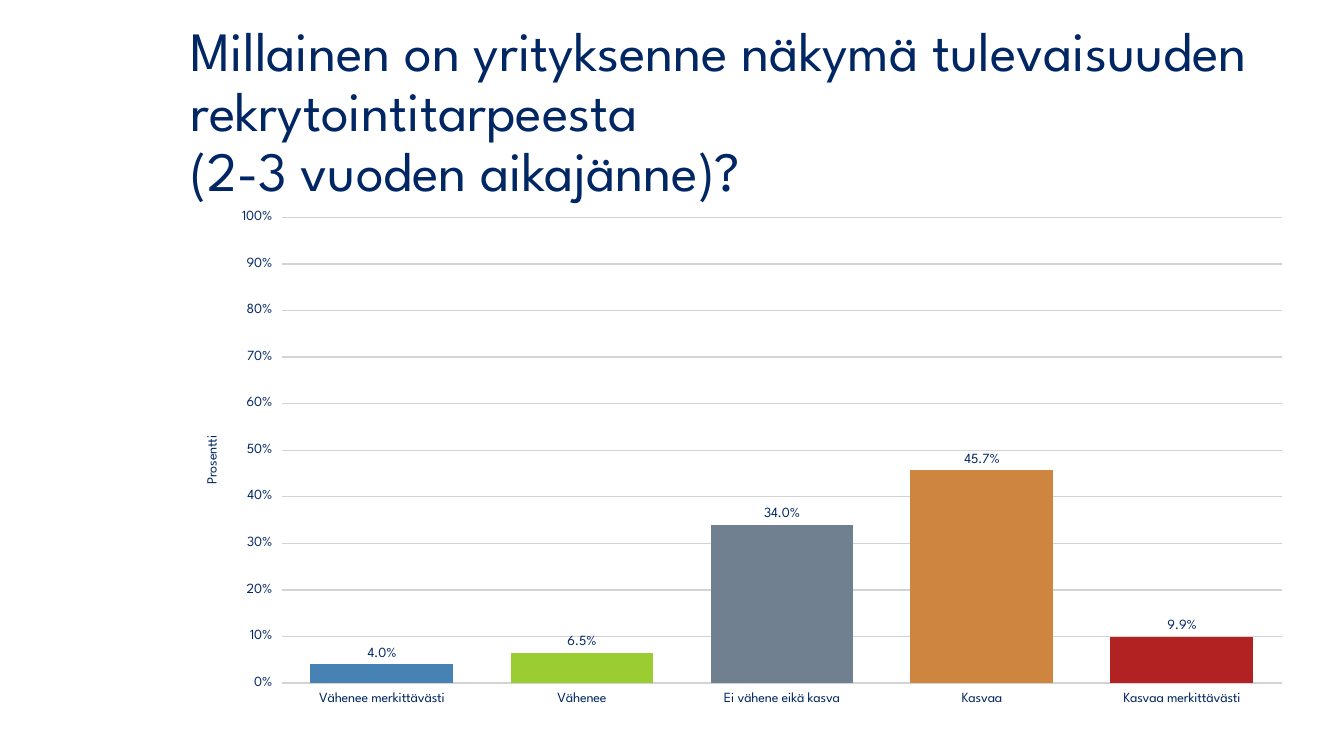
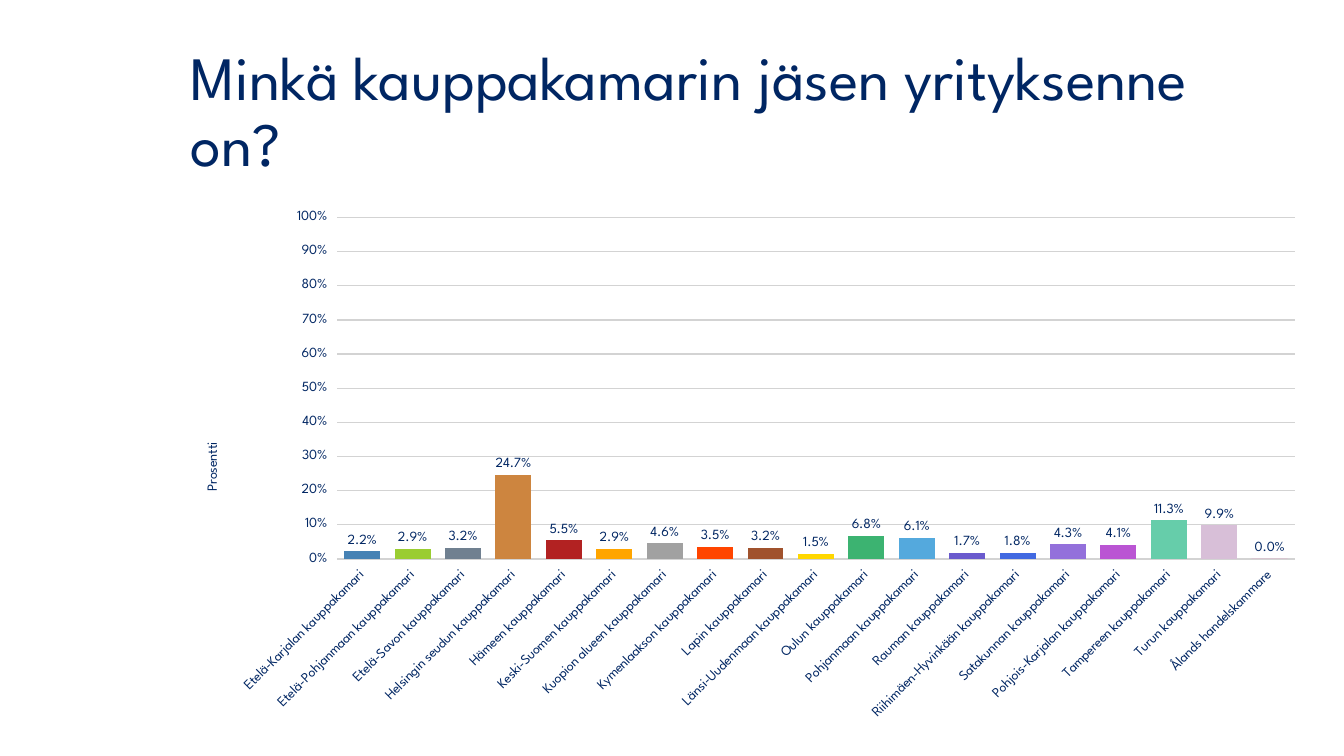
"""Build two survey slides, each with a title and a column chart of percentages."""
from dataclasses import dataclass
from typing import Any

import lxml.etree
import pptx
import pptx.chart.data
import pptx.dml.color
import pptx.enum.chart
import pptx.enum.text
import pptx.oxml.ns
import pptx.util

Pt = pptx.util.Pt
RGBColor = pptx.dml.color.RGBColor
qn = pptx.oxml.ns.qn

FONT_NAME = "League Spartan"
NAVY = RGBColor(0x00, 0x26, 0x63)
GRID_GREY = RGBColor(0xD3, 0xD3, 0xD3)
BAR_COLOURS = [
    RGBColor.from_string(value)
    for value in (
        "4682B4 9ACD32 708090 CD853F B22222 FFA500 A1A1A1 FF4500 A0522D FFD700 "
        "3CB371 54A9DD 6A5ACD 4169E1 9370DB BA55D3 66CDAA D8BFD8 FF69B4"
    ).split()
]
CHART_FONT = {"name": FONT_NAME, "size": Pt(10), "bold": False}
VALUE_AXIS_FORMAT = {
    "minimum_scale": 0,
    "maximum_scale": 1,
    "major_unit": 0.1,
    "has_major_gridlines": True,
    "has_title": True,
}
DATA_LABEL_FORMAT = {
    "show_value": True,
    "number_format": "0.0%",
    "number_format_is_linked": False,
    "position": pptx.enum.chart.XL_LABEL_POSITION.OUTSIDE_END,
}
TICK_LABEL_FORMAT = {"number_format": "0%", "number_format_is_linked": False}


@dataclass(frozen=True)
class Frame:
    """A rectangle in points."""

    left: float
    top: float
    width: float
    height: float

    def lengths(self) -> tuple[pptx.util.Length, ...]:
        """Return the four sides as lengths for python-pptx."""
        return tuple(Pt(side) for side in (self.left, self.top, self.width, self.height))


@dataclass(frozen=True)
class Question:
    """One survey question with its answers and its chart geometry."""

    title: str
    title_size: float
    chart_frame: Frame
    plot_frame: Frame
    label_angle: int
    shares: dict[str, float]


TITLE_FRAME = Frame(128.9, 28.8, 787.7, 104.4)
QUESTIONS = [
    Question(
        "Millainen on yrityksenne näkymä tulevaisuuden rekrytointitarpeesta\v"
        "(2-3 vuoden aikajänne)?",
        39.6,
        Frame(128.9, 144, 802.8, 367.2),
        Frame(201.4, 155.4, 714.3, 332.5),
        0,
        {
            "Vähenee merkittävästi": 0.04,
            "Vähenee": 0.065,
            "Ei vähene eikä kasva": 0.34,
            "Kasvaa": 0.457,
            "Kasvaa merkittävästi": 0.099,
        },
    ),
    Question(
        "Minkä kauppakamarin jäsen yrityksenne on?",
        44,
        Frame(128.9, 144, 812.2, 378),
        Frame(240.7, 155.4, 684.3, 243.9),
        -45,
        {
            "Etelä-Karjalan kauppakamari": 0.022,
            "Etelä-Pohjanmaan kauppakamari": 0.029,
            "Etelä-Savon kauppakamari": 0.032,
            "Helsingin seudun kauppakamari": 0.247,
            "Hämeen kauppakamari": 0.055,
            "Keski-Suomen kauppakamari": 0.029,
            "Kuopion alueen kauppakamari": 0.046,
            "Kymenlaakson kauppakamari": 0.035,
            "Lapin kauppakamari": 0.032,
            "Länsi-Uudenmaan kauppakamari": 0.015,
            "Oulun kauppakamari": 0.068,
            "Pohjanmaan kauppakamari": 0.061,
            "Rauman kauppakamari": 0.017,
            "Riihimäen-Hyvinkään kauppakamari": 0.018,
            "Satakunnan kauppakamari": 0.043,
            "Pohjois-Karjalan kauppakamari": 0.041,
            "Tampereen kauppakamari": 0.113,
            "Turun kauppakamari": 0.099,
            "Ålands handelskammare": 0,
        },
    ),
]


def apply_format(target: Any, values: dict[str, Any]) -> None:
    """Set every attribute in values on target."""
    for name, value in values.items():
        setattr(target, name, value)


def style_font(font: Any, values: dict[str, Any]) -> None:
    """Apply font values and the shared text colour."""
    apply_format(font, values)
    font.color.rgb = NAVY


def set_layout(parent: Any, index: int, settings: dict[str, Any]) -> None:
    """Give a chart part a manual layout as its child at index."""
    for old_layout in parent.findall(qn("c:layout")):
        parent.remove(old_layout)
    layout = lxml.etree.Element(qn("c:layout"))
    manual = lxml.etree.SubElement(layout, qn("c:manualLayout"))
    for name, value in settings.items():
        lxml.etree.SubElement(manual, qn(f"c:{name}")).set("val", str(value))
    parent.insert(index, layout)


def rotate_text(element: Any, degrees: int) -> None:
    """Rotate the text body inside a chart element."""
    for body in element.iter(qn("a:bodyPr")):
        body.set("rot", str(degrees * 60000))
        body.set("vert", "horz")


def format_title(shape: Any, question: Question) -> None:
    """Place and write the slide title."""
    shape.left, shape.top, shape.width, shape.height = TITLE_FRAME.lengths()
    text_frame = shape.text_frame
    text_frame.text = question.title
    apply_format(text_frame, {
        "word_wrap": True,
        "auto_size": pptx.enum.text.MSO_AUTO_SIZE.NONE,
        "vertical_anchor": pptx.enum.text.MSO_ANCHOR.MIDDLE,
    })
    paragraph = text_frame.paragraphs[0]
    apply_format(paragraph, {
        "alignment": pptx.enum.text.PP_ALIGN.LEFT,
        "line_spacing": 0.9,
    })
    for run in paragraph.runs:
        style_font(run.font, {"name": FONT_NAME, "size": Pt(question.title_size)})


def format_axes(chart: Any, label_angle: int) -> None:
    """Format both axes, the gridlines and the value axis title."""
    for axis in (chart.category_axis, chart.value_axis):
        style_font(axis.tick_labels.font, CHART_FONT)
        axis.format.line.fill.background()
    if label_angle:
        rotate_text(chart.category_axis.tick_labels._element, label_angle)
    value_axis = chart.value_axis
    apply_format(value_axis, VALUE_AXIS_FORMAT)
    apply_format(value_axis.tick_labels, TICK_LABEL_FORMAT)
    grid_line = value_axis.major_gridlines.format.line
    grid_line.width = Pt(1)
    grid_line.color.rgb = GRID_GREY
    axis_title = value_axis.axis_title
    axis_title.text_frame.text = "Prosentti"
    style_font(axis_title.text_frame.paragraphs[0].runs[0].font, CHART_FONT)
    title_element = axis_title._element
    rotate_text(title_element, -90)
    set_layout(title_element, 1, {"xMode": "edge", "yMode": "edge", "x": 0.02, "y": 0.45})


def add_share_chart(slide: Any, question: Question) -> None:
    """Add the column chart of answer shares."""
    chart_data = pptx.chart.data.CategoryChartData()
    chart_data.categories = list(question.shares)
    chart_data.add_series("Series 1", list(question.shares.values()))
    outer, inner = question.chart_frame, question.plot_frame
    chart = slide.shapes.add_chart(
        pptx.enum.chart.XL_CHART_TYPE.COLUMN_CLUSTERED, *outer.lengths(), chart_data
    ).chart
    apply_format(chart, {"has_legend": False, "has_title": False})
    style_font(chart.font, {"name": FONT_NAME, "size": Pt(18)})
    format_axes(chart, question.label_angle)
    plot = chart.plots[0]
    apply_format(plot, {"gap_width": 40, "vary_by_categories": False, "has_data_labels": True})
    apply_format(plot.data_labels, DATA_LABEL_FORMAT)
    style_font(plot.data_labels.font, CHART_FONT)
    series = plot.series[0]
    series.format.fill.solid()
    series.format.fill.fore_color.rgb = BAR_COLOURS[0]
    for index, colour in enumerate(BAR_COLOURS[:len(question.shares)]):
        fill = series.points[index].format.fill
        fill.solid()
        fill.fore_color.rgb = colour
    set_layout(chart._chartSpace.find(".//" + qn("c:plotArea")), 0, {
        "layoutTarget": "inner",
        "xMode": "edge",
        "yMode": "edge",
        "x": (inner.left - outer.left) / outer.width,
        "y": (inner.top - outer.top) / outer.height,
        "w": inner.width / outer.width,
        "h": inner.height / outer.height,
    })


def main() -> None:
    """Build and save the presentation."""
    presentation = pptx.Presentation()
    apply_format(presentation, {"slide_width": Pt(960), "slide_height": Pt(540)})
    for question in QUESTIONS:
        slide = presentation.slides.add_slide(presentation.slide_layouts.get_by_name("Title Only"))
        format_title(slide.shapes.title, question)
        add_share_chart(slide, question)
    presentation.save("out.pptx")


if __name__ == "__main__":
    main()
